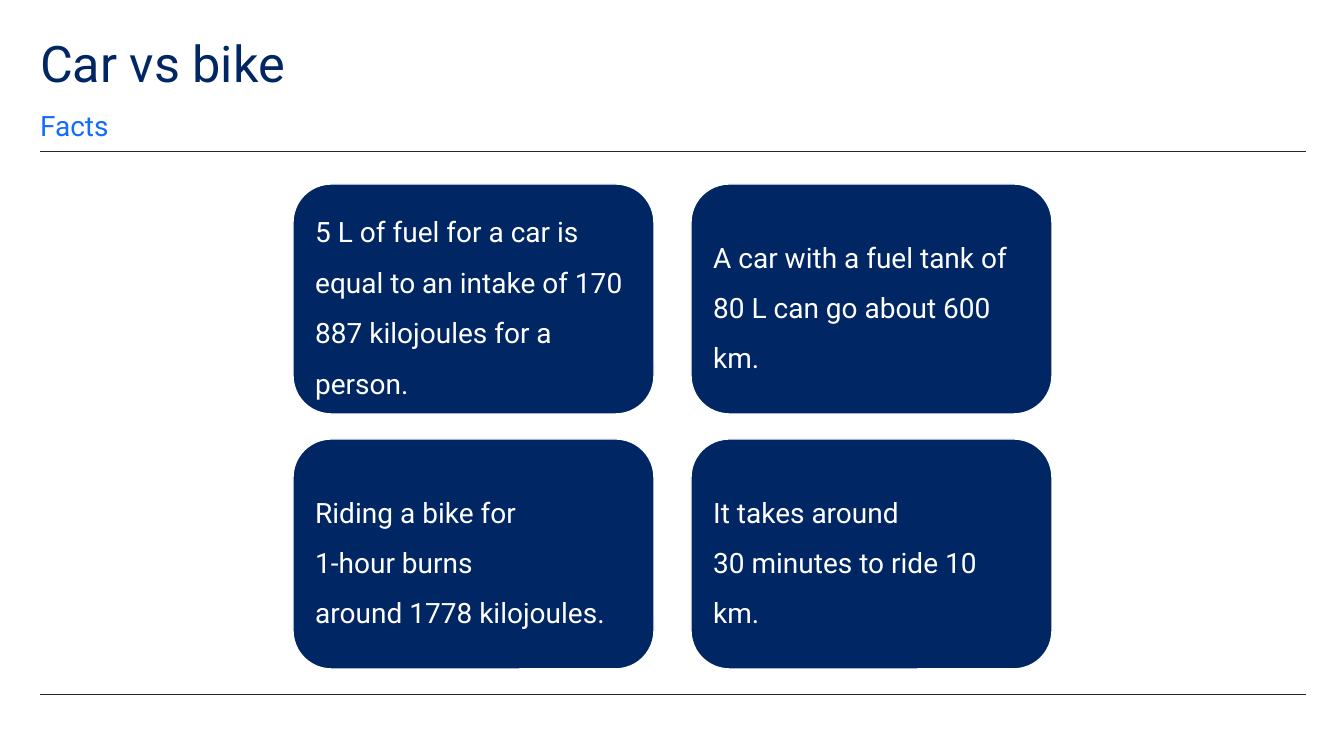
"""Build the "Car vs bike" facts slide with four rounded cards."""
from pptx import Presentation
from pptx.dml.color import RGBColor
from pptx.enum.shapes import MSO_CONNECTOR as Connector, MSO_SHAPE as Shape
from pptx.enum.text import MSO_ANCHOR as Anchor, PP_ALIGN as Align
from pptx.oxml.ns import qn
from pptx.util import Pt
from lxml.etree import SubElement

THEME = {
    "font": "Roboto",
    "navy": RGBColor.from_string("002664"),
    "blue": RGBColor.from_string("146CFD"),
    "white": RGBColor.from_string("FFFFFF"),
    "rule": RGBColor.from_string("22272B"),
    "title": Pt(36),
    "body": Pt(20),
}
PX = 914400 / 100.8


def px(*lengths):
    return [round(length * PX) for length in lengths]


def write(shape, text, color, size=THEME["body"], anchor=Anchor.TOP, inset=0, spacing=1.0):
    frame = shape.text_frame
    frame.word_wrap = True
    frame.vertical_anchor = anchor
    frame.margin_left, frame.margin_top, frame.margin_right, frame.margin_bottom = px(*[inset] * 4)
    paragraph = frame.paragraphs[0]
    paragraph.text = text
    paragraph.alignment = Align.LEFT
    paragraph.line_spacing = spacing
    for run in paragraph.runs:
        run.font.name = THEME["font"]
        run.font.size = size
        run.font.color.rgb = color


presentation = Presentation()
presentation.slide_width, presentation.slide_height = px(1344, 756)
slide = presentation.slides.add_slide(presentation.slide_layouts[6])
shapes = slide.shapes

LEFT, RIGHT = 40, 1306
for y in (151, 694):
    rule = shapes.add_connector(Connector.STRAIGHT, *px(LEFT, y, RIGHT, y))
    rule.line.color.rgb = THEME["rule"]
    rule.line.width = Pt(0.5)
    SubElement(rule._element.spPr, qn("a:effectLst"))

title = shapes.add_textbox(*px(LEFT, 39, 1111, 61))
write(title, "Car vs bike", THEME["navy"], size=THEME["title"], spacing=0.9)
subtitle = shapes.add_textbox(*px(LEFT, 108, 1111, 34))
write(subtitle, "Facts", THEME["blue"], anchor=Anchor.BOTTOM)

FACTS = [
    "5 L of fuel for a car is equal to an intake of 170 887 kilojoules for a person.",
    "A car with a fuel tank of 80 L can go about 600 km.",
    "Riding a bike for \n1-hour burns \naround 1778 kilojoules.",
    "It takes around \n30 minutes to ride 10 km.",
]
CARD_LEFT, CARD_TOP, CARD_WIDTH, CARD_HEIGHT = 293, 184, 361, 230
COLUMN_STEP, ROW_STEP = 398, 255
for index, fact in enumerate(FACTS):
    row, column = divmod(index, 2)
    card = shapes.add_shape(
        Shape.ROUNDED_RECTANGLE,
        *px(CARD_LEFT + column * COLUMN_STEP, CARD_TOP + row * ROW_STEP, CARD_WIDTH, CARD_HEIGHT),
    )
    card.shadow.inherit = False
    card.fill.solid()
    card.fill.fore_color.rgb = THEME["navy"]
    card.line.color.rgb = THEME["white"]
    card.line.width = Pt(1)
    write(card, fact, THEME["white"], anchor=Anchor.MIDDLE, inset=11, spacing=1.5)

presentation.save("out.pptx")
